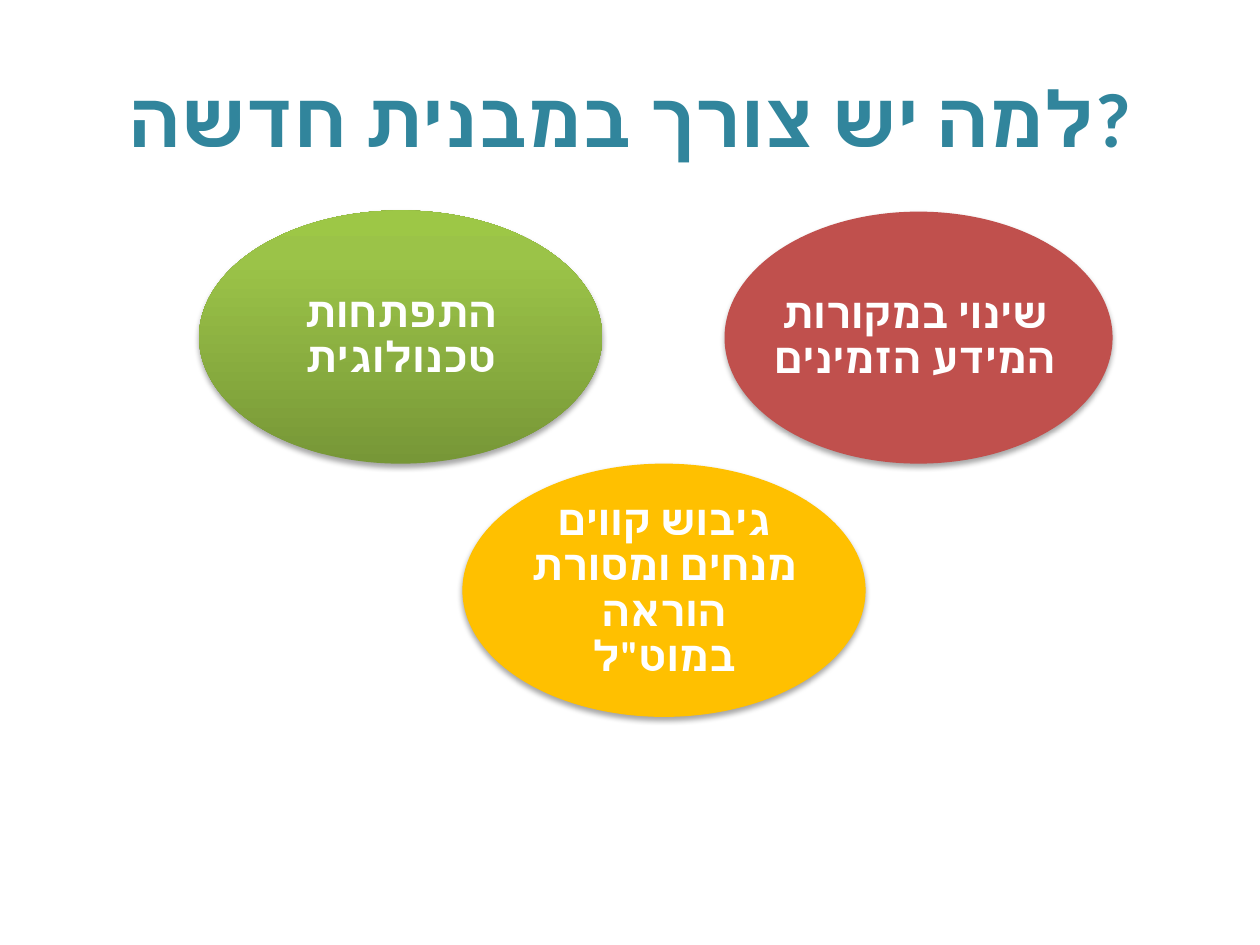
from copy import deepcopy

from lxml import etree
from pptx import Presentation
from pptx.dml.color import RGBColor
from pptx.enum.shapes import MSO_SHAPE
from pptx.enum.text import MSO_ANCHOR, PP_ALIGN
from pptx.oxml.ns import qn
from pptx.util import Inches, Pt

FONT = "Calibri"
GREEN_STOPS = [(0, "779737"), (0.8, "9BC348"), (1, "9DC746")]


def color(value):
    return RGBColor.from_string(value)


def add_text(shapes, text, box, size=24, text_color="FFFFFF", inset=0.03,
             line_spacing=None, fill=None):
    shape = shapes.add_textbox(*map(Inches, box))
    if fill:
        shape.fill.solid()
        shape.fill.fore_color.rgb = color(fill)
    frame = shape.text_frame
    frame.word_wrap = True
    frame.vertical_anchor = MSO_ANCHOR.MIDDLE
    frame.margin_left = frame.margin_right = Inches(inset)
    frame.margin_top = frame.margin_bottom = Inches(inset)
    paragraph = frame.paragraphs[0]
    paragraph.alignment = PP_ALIGN.CENTER
    paragraph.line_spacing = line_spacing
    run = paragraph.add_run()
    run.text = text
    run.font.name = FONT
    run.font.size = Pt(size)
    run.font.bold = True
    run.font.color.rgb = color(text_color)
    # Hebrew letters take the complex-script font
    etree.SubElement(run.font._element, qn("a:cs"), typeface=FONT)


def fill_gradient(shape, stops):
    shape.fill.gradient()
    shape.fill.gradient_angle = 90
    stop_list = shape._element.spPr.find(".//" + qn("a:gsLst"))
    while len(stop_list) < len(stops):
        stop_list.append(deepcopy(stop_list[-1]))
    for stop, (position, value) in zip(shape.fill.gradient_stops, stops):
        stop.position = position
        stop.color.rgb = color(value)


def add_shadow(shape):
    shape.shadow.inherit = False
    effects = shape._element.spPr.find(qn("a:effectLst"))
    shadow = etree.SubElement(
        effects, qn("a:outerShdw"), blurRad=str(Pt(3.1)), dist=str(Pt(1.8)),
        dir="5400000", rotWithShape="0")
    black = etree.SubElement(shadow, qn("a:srgbClr"), val="000000")
    etree.SubElement(black, qn("a:alpha"), val="35000")


def add_oval(slide, text, box, label_box, fill, inset=0.03, label_fill=None):
    group = slide.shapes.add_group_shape()
    oval = group.shapes.add_shape(MSO_SHAPE.OVAL, *map(Inches, box))
    if isinstance(fill, list):
        fill_gradient(oval, fill)
    else:
        oval.fill.solid()
        oval.fill.fore_color.rgb = color(fill)
    oval.line.fill.background()
    add_shadow(oval)
    add_text(group.shapes, text, label_box, inset=inset, line_spacing=0.9,
             fill=label_fill)


def main():
    presentation = Presentation()
    presentation.slide_width = Inches(10)
    presentation.slide_height = Inches(7.5)
    slide = presentation.slides.add_slide(presentation.slide_layouts[6])

    # Title
    add_text(slide.shapes, "למה יש צורך במבנית חדשה?", (0.5, 0.3, 9, 1.25),
             size=44, text_color="31859C", inset=0.05)

    # Three reasons
    add_oval(slide, "התפתחות טכנולוגית", (1.58, 1.67, 3.2, 2.01),
             (2.05, 1.96, 2.26, 1.42), GREEN_STOPS)
    add_oval(slide, "שינוי במקורות המידע הזמינים", (5.75, 1.68, 3.08, 2),
             (5.83, 1.97, 2.86, 1.41), "C0504D", inset=0.02)
    add_oval(slide, 'גיבוש קווים מנחים ומסורת הוראה במוט"ל',
             (3.67, 3.68, 3.2, 2.01), (4.14, 3.97, 2.26, 1.42), "FFC000",
             label_fill="FFC000")

    presentation.save("out.pptx")


if __name__ == "__main__":
    main()
